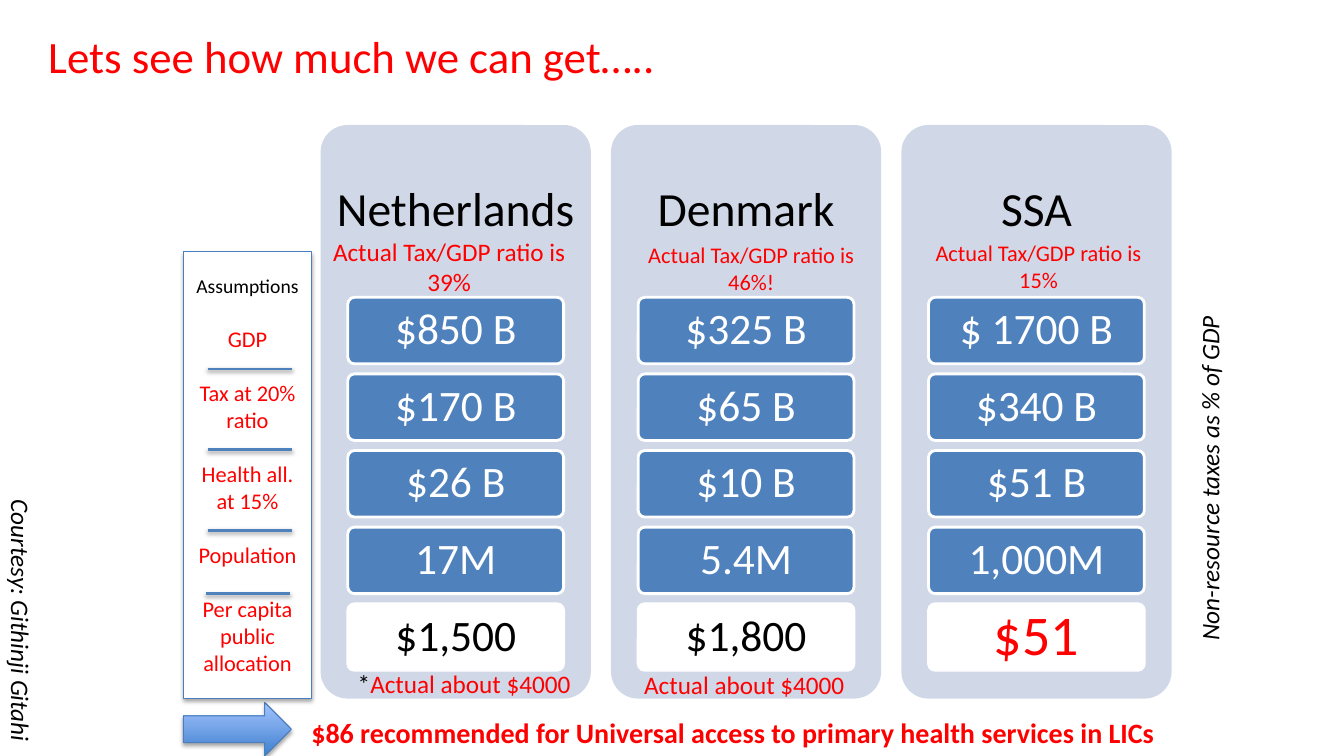
from dataclasses import dataclass

from lxml.etree import SubElement
from pptx import Presentation
from pptx.dml.color import RGBColor
from pptx.enum.shapes import MSO_CONNECTOR, MSO_SHAPE
from pptx.enum.text import MSO_ANCHOR, PP_ALIGN
from pptx.oxml.ns import qn
from pptx.util import Inches, Pt


@dataclass(frozen=True)
class Theme:
    font: str = "Calibri"
    black: str = "000000"
    white: str = "FFFFFF"
    red: str = "FF0000"
    panel: str = "D0D8E8"
    blue: str = "4F81BD"
    edge: str = "4B7EBC"
    arrow_dark: str = "3F80CE"
    arrow_light: str = "A4C4FF"
    title: int = 32
    country: int = 34
    figure: int = 31
    highlight: int = 40
    footer: int = 20
    note: int = 18
    small: int = 16
    caption: int = 14


def rgb(value):
    return RGBColor.from_string(value)


class SlideBuilder:
    def __init__(self, slide, theme):
        self.shapes = slide.shapes
        self.theme = theme

    def style(self, paragraph, size, color, align=None, bold=False, italic=False):
        paragraph.alignment = align
        for run in paragraph.runs:
            font = run.font
            font.name, font.size = self.theme.font, Pt(size)
            font.bold, font.italic = bold, italic
            font.color.rgb = rgb(color)

    def text(self, box, words, size, color, align=None, wrap=False,
             anchor=MSO_ANCHOR.TOP, rotation=0, **font):
        label = self.shapes.add_textbox(*map(Inches, box))
        label.rotation = rotation
        frame = label.text_frame
        frame.word_wrap, frame.vertical_anchor = wrap, anchor
        frame.text = words
        for paragraph in frame.paragraphs:
            self.style(paragraph, size, color, align, **font)
        return frame

    def shape(self, kind, box, fill=None, line=None, width=0.75):
        block = self.shapes.add_shape(kind, *map(Inches, box))
        block.shadow.inherit = False
        if kind == MSO_SHAPE.ROUNDED_RECTANGLE:
            block.adjustments[0] = 0.1
        if fill:
            block.fill.solid()
            block.fill.fore_color.rgb = rgb(fill)
        if line:
            block.line.color.rgb = rgb(line)
            block.line.width = Pt(width)
        else:
            block.line.fill.background()
        return block

    def figure(self, box, words, fill, size, color):
        card = self.shape(MSO_SHAPE.ROUNDED_RECTANGLE, box, fill, self.theme.white, 2)
        frame = card.text_frame
        frame.word_wrap, frame.vertical_anchor = True, MSO_ANCHOR.MIDDLE
        frame.text = words
        self.style(frame.paragraphs[0], size, color, PP_ALIGN.CENTER)
        frame.paragraphs[0].line_spacing = 0.9

    def divider(self, left, right, y):
        rule = self.shapes.add_connector(
            MSO_CONNECTOR.STRAIGHT, *map(Inches, (left, y, right, y)))
        rule.line.color.rgb = rgb(self.theme.blue)
        rule.line.width = Pt(2)
        SubElement(rule.element.spPr, qn("a:effectLst"))
        self.shadow(rule, 1.6, 38)

    def shadow(self, item, distance, opacity):
        effects = item.element.spPr.find(qn("a:effectLst"))
        outer = SubElement(effects, qn("a:outerShdw"), blurRad=str(Pt(3.1)),
                           dist=str(Pt(distance)), dir="5400000", rotWithShape="0")
        color = SubElement(outer, qn("a:srgbClr"), val=self.theme.black)
        SubElement(color, qn("a:alpha"), val=str(opacity * 1000))


COUNTRIES = [
    ("Netherlands", ["$850 B", "$170 B", "$26 B", "17M", "$1,500"]),
    ("Denmark", ["$325 B", "$65 B", "$10 B", "5.4M", "$1,800"]),
    ("SSA", ["$ 1700 B", "$340 B", "$51 B", "1,000M", "$51"]),
]
ASSUMPTIONS = ["Assumptions", "GDP", "Tax at 20% ratio", "Health all. at 15%",
               "Population", "Per capita public allocation"]
DIVIDERS = [(2.06, 3.66), (2.06, 4.46), (2.06, 5.26), (2.04, 5.89)]


def main():
    theme = Theme()
    deck = Presentation()
    deck.slide_width, deck.slide_height = Inches(13.33), Inches(7.5)
    build = SlideBuilder(deck.slides.add_slide(deck.slide_layouts[6]), theme)

    # Title and side label
    build.text((0.38, 0.13, 12.39, 0.84), "Lets see how much we can get…..",
               theme.title, theme.red, wrap=True, anchor=MSO_ANCHOR.MIDDLE)
    build.text((10.26, 4.52, 3.47, 0.4), "Non-resource taxes as % of GDP",
               theme.note, theme.black, rotation=270, italic=True)

    # Country panels with their figures
    for column, (country, figures) in enumerate(COUNTRIES):
        left = 3.18 + 2.88 * column
        build.shape(MSO_SHAPE.ROUNDED_RECTANGLE, (left, 1.24, 2.68, 5.69), theme.panel)
        heading = build.text((left, 1.24, 2.68, 1.71), country, theme.country,
                             theme.black, PP_ALIGN.CENTER, True, MSO_ANCHOR.MIDDLE)
        heading.paragraphs[0].line_spacing = 0.9
        for row, amount in enumerate(figures):
            fill, size, color = theme.blue, theme.figure, theme.white
            if row == len(figures) - 1:
                fill, color = theme.white, theme.black
                if country == "SSA":
                    size, color = theme.highlight, theme.red
            build.figure((left + 0.27, 2.95 + 0.76 * row, 2.14, 0.66),
                         amount, fill, size, color)

    # Recommendation
    arrow = build.shape(MSO_SHAPE.RIGHT_ARROW, (1.82, 6.97, 1.07, 0.53), line=theme.edge)
    arrow.fill.gradient()
    arrow.fill.gradient_angle = 90
    for stop, color in zip(arrow.fill.gradient_stops,
                           (theme.arrow_dark, theme.arrow_light)):
        stop.color.rgb = rgb(color)
    build.shadow(arrow, 1.8, 35)
    build.text((2.99, 7.05, 8.64, 0.44),
               "$86 recommended for Universal access to primary health services in LICs",
               theme.footer, theme.red, bold=True)

    # Assumptions column
    assumptions = build.shape(MSO_SHAPE.RECTANGLE, (1.82, 2.5, 1.27, 4.43),
                              theme.white, theme.edge)
    build.shadow(assumptions, 1.8, 35)
    frame = assumptions.text_frame
    frame.word_wrap, frame.vertical_anchor = True, MSO_ANCHOR.MIDDLE
    frame.text = "\n".join(ASSUMPTIONS)
    caption, *entries = frame.paragraphs
    build.style(caption, theme.caption, theme.black, PP_ALIGN.CENTER)
    for entry in entries:
        build.style(entry, theme.small, theme.red, PP_ALIGN.CENTER)
        entry.space_before = Pt(19.5)
    for left, y in DIVIDERS:
        build.divider(left, left + 0.84, y)

    # Actual tax ratios
    for box, ratio, size in [
        ((3.19, 2.29, 2.53, 0.71), "39%", theme.note),
        ((9.14, 2.32, 2.32, 0.64), "15%", theme.small),
        ((6.29, 2.34, 2.32, 0.64), "46%!", theme.small),
    ]:
        build.text(box, f"Actual Tax/GDP ratio is\n{ratio}", size, theme.red,
                   PP_ALIGN.CENTER)

    # Actual spending notes
    spending = build.text((3.45, 6.58, 2.34, 0.4), "*", theme.note, theme.black)
    actual = spending.paragraphs[0].add_run()
    actual.text = "Actual about $4000"
    actual.font.name, actual.font.size = theme.font, Pt(theme.note)
    actual.font.color.rgb = rgb(theme.red)
    build.text((6.29, 6.59, 2.21, 0.4), "Actual about $4000", theme.note, theme.red)

    # Credit
    build.text((-1.1, 5.97, 2.62, 0.4), "Courtesy: Githinji Gitahi",
               theme.note, theme.black, rotation=90, italic=True)

    deck.save("out.pptx")


if __name__ == "__main__":
    main()
